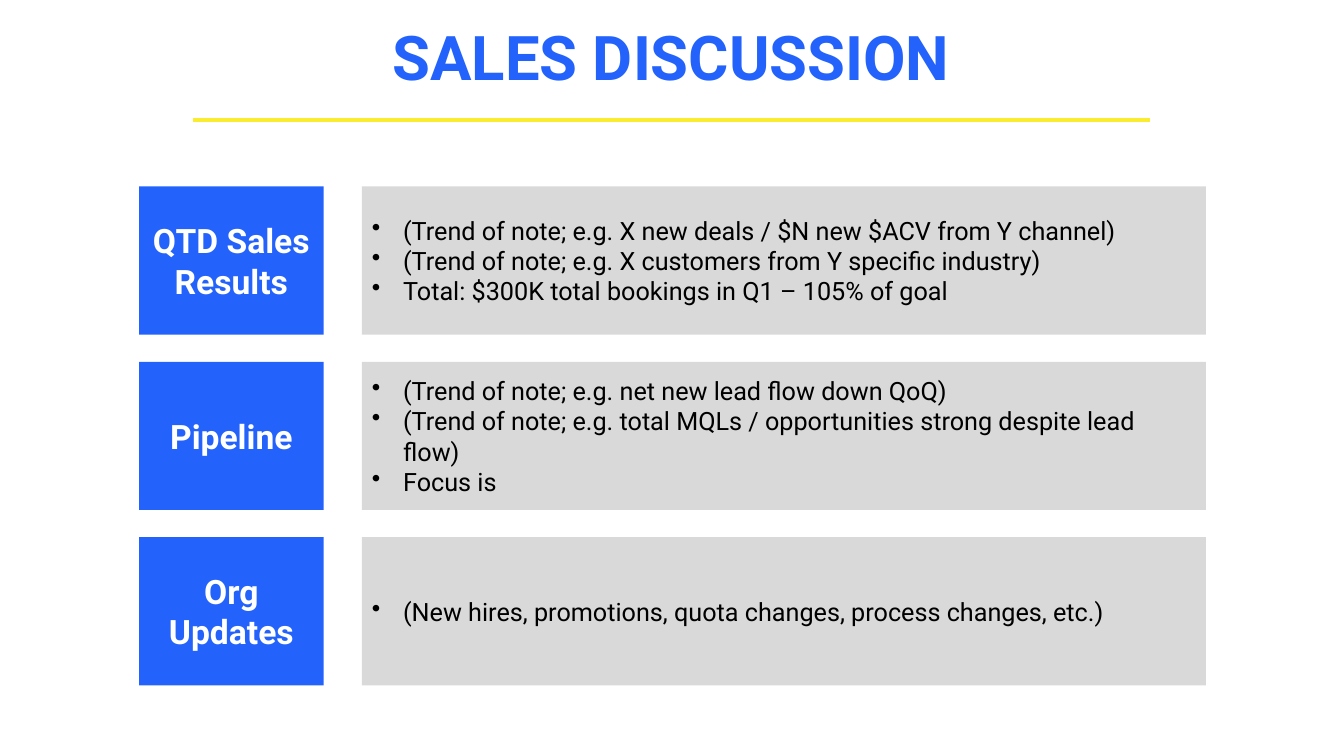
from dataclasses import dataclass

from lxml import etree
from pptx import Presentation
from pptx.dml.color import RGBColor
from pptx.enum.shapes import MSO_CONNECTOR, MSO_SHAPE
from pptx.enum.text import MSO_ANCHOR, PP_ALIGN
from pptx.oxml.ns import qn
from pptx.util import Inches, Pt

RECT = MSO_SHAPE.RECTANGLE
STRAIGHT = MSO_CONNECTOR.STRAIGHT
MIDDLE = MSO_ANCHOR.MIDDLE
LEFT, CENTER = PP_ALIGN.LEFT, PP_ALIGN.CENTER


@dataclass(frozen=True)
class Theme:
    font: str = "Roboto"
    blue: str = "2363FB"
    gray: str = "D9D9D9"
    gold: str = "F9EC31"
    white: str = "FFFFFF"
    black: str = "000000"
    title: int = 44
    label: int = 24
    body: int = 18
    rule: int = 3


THEME = Theme()

TOPICS = [
    ("QTD Sales Results", [
        "(Trend of note; e.g. X new deals / $N new $ACV from Y channel)",
        "(Trend of note; e.g. X customers from Y specific industry)",
        "Total: $300K total bookings in Q1 – 105% of goal",
    ]),
    ("Pipeline", [
        "(Trend of note; e.g. net new lead flow down QoQ)",
        "(Trend of note; e.g. total MQLs / opportunities strong despite lead flow)",
        "Focus is",
    ]),
    ("Org Updates", [
        "(New hires, promotions, quota changes, process changes, etc.)",
    ]),
]


def color(code):
    return RGBColor.from_string(code)


def write(shape, lines, size, ink, align, bold=False):
    """Fill a shape with one styled paragraph per line."""
    frame = shape.text_frame
    frame.word_wrap = True
    frame.vertical_anchor = MIDDLE
    frame.text = "\n".join(lines)
    for para in frame.paragraphs:
        para.alignment = align
        para.font.name = THEME.font
        para.font.size = Pt(size)
        para.font.bold = bold
        para.font.color.rgb = color(ink)


def add_bullets(shape, indent=0.31):
    for para in shape.text_frame.paragraphs:
        props = para._p.get_or_add_pPr()
        props.set("marL", str(Inches(indent)))
        props.set("indent", str(-Inches(indent)))
        mark = etree.Element(qn("a:buChar"), char="•")
        props.insert_element_before(mark, "a:tabLst", "a:defRPr", "a:extLst")


def add_panel(slide, left, top, width, height, fill):
    panel = slide.shapes.add_shape(
        RECT, Inches(left), Inches(top), Inches(width), Inches(height))
    panel.shadow.inherit = False
    panel.fill.solid()
    panel.fill.fore_color.rgb = color(fill)
    panel.line.fill.background()
    return panel


def add_header(slide, left, top, width, height):
    """Place the title in the box and a centred rule below it."""
    box = slide.shapes.add_textbox(
        Inches(left), Inches(top), Inches(width), Inches(height))
    write(box, ["SALES DISCUSSION"], THEME.title, THEME.blue, CENTER, True)
    inset = 1.02
    y = Inches(top + height + 0.15)
    rule = slide.shapes.add_connector(
        STRAIGHT, Inches(left + inset), y, Inches(left + width - inset), y)
    rule.line.color.rgb = color(THEME.gold)
    rule.line.width = Pt(THEME.rule)
    etree.SubElement(rule._element.spPr, qn("a:effectLst"))


def add_topics(slide, left, top, width, height):
    """Stack one label and its notes per topic, evenly spaced in the box."""
    gap, side, gutter = 0.27, 1.83, 0.38
    count = len(TOPICS)
    row = (height - gap * (count - 1)) / count
    for i, (name, notes) in enumerate(TOPICS):
        y = top + i * (row + gap)
        label = add_panel(slide, left, y, side, row, THEME.blue)
        write(label, [name], THEME.label, THEME.white, CENTER, True)
        shift = side + gutter
        body = add_panel(
            slide, left + shift, y, width - shift, row, THEME.gray)
        write(body, notes, THEME.body, THEME.black, LEFT)
        add_bullets(body)


def main():
    deck = Presentation()
    deck.slide_width = Inches(13.33)
    deck.slide_height = Inches(7.5)
    slide = deck.slides.add_slide(deck.slide_layouts[6])
    add_header(slide, 0.89, 0.07, 11.54, 0.97)
    add_topics(slide, 1.38, 1.85, 10.58, 4.95)
    deck.save("out.pptx")


if __name__ == "__main__":
    main()
